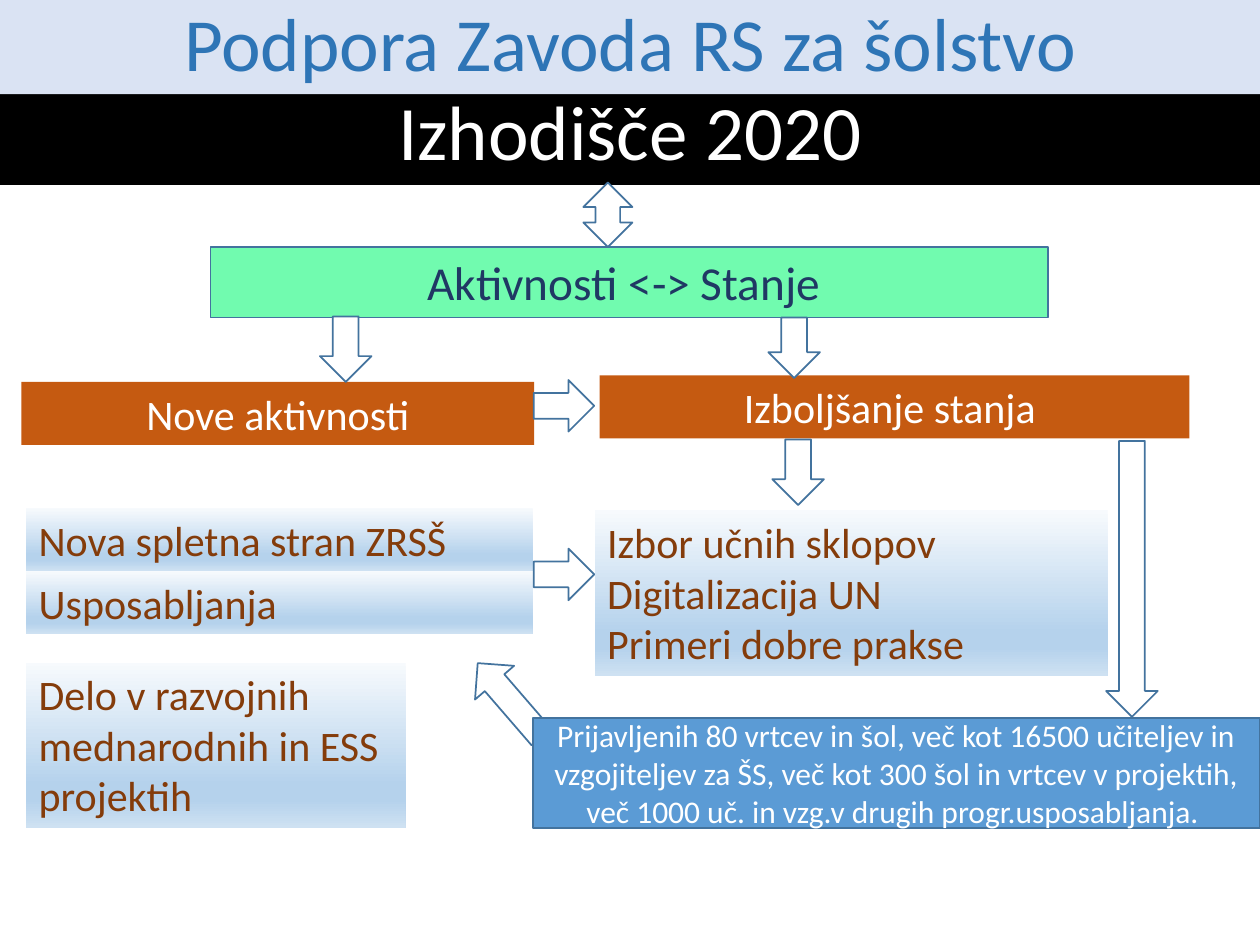
"""Build the slide on the 2020 starting points of school support."""
from copy import deepcopy
from dataclasses import dataclass

from pptx import Presentation
from pptx import util as u
from pptx.dml import color
from pptx.enum import shapes, text

FONT = "Calibri"
WHITE, OUTLINE, ORANGE, BROWN = "FFFFFF", "43739E", "C55A11", "843C0B"
GRADIENT = ((0, "F7FAFD"), (0.74, "B5D2EC"), (0.83, "B5D2EC"), (1, "CEE1F2"))
ARROW_WIDTH = 1.04


@dataclass
class Box:
    """A text box in centimetres; without a fill colour it gets the gradient."""
    lines: tuple[str, ...]
    left: float
    top: float
    width: float
    height: float
    fill: str | None = None
    ink: str = BROWN
    size: float = 24
    outline: float = 0
    centred: bool = True
    grows: bool = True
    spacing: float = 1


@dataclass
class Arrow:
    """A block arrow in centimetres, before rotation."""
    left: float
    top: float
    height: float
    rotation: float = 0
    width: float = ARROW_WIDTH
    kind: shapes.MSO_SHAPE = shapes.MSO_SHAPE.DOWN_ARROW


TITLE = Box(("Izhodišče 2020",), 0, 1.75, 25.4, 1.98, "000000", WHITE, 44,
            grows=False, spacing=0.9)

BOXES = (
    Box(("Nove aktivnosti",), 0.43, 7.7, 10.34, 1.27, ORANGE, WHITE),
    Box(("Aktivnosti <-> Stanje ",), 4.24, 4.98, 16.89, 1.42, "71FBAF", "203864", 27, 0.75),
    Box(("Izboljšanje stanja ",), 12.09, 7.57, 11.89, 1.27, ORANGE, WHITE),
    Box(("Izbor učnih sklopov", "Digitalizacija UN", "Primeri dobre prakse"),
        11.99, 10.29, 10.34, 3.33, centred=False),
    Box(("Nova spletna stran ZRSŠ",), 0.53, 10.24, 10.21, 1.27, centred=False),
    Box(("Usposabljanja",), 0.53, 11.51, 10.21, 1.27, centred=False),
    Box(("Delo v razvojnih mednarodnih in ESS projektih",),
        0.53, 13.36, 7.65, 3.33, centred=False),
)

ARROWS = (
    Arrow(11.76, 3.68, 1.3, width=0.99, kind=shapes.MSO_SHAPE.UP_DOWN_ARROW),
    Arrow(6.45, 6.38, 1.32),
    Arrow(15.49, 6.4, 1.22),
    Arrow(10.85, 7.57, 1.22, 270),
    Arrow(9.75, 13.13, 1.96, 139.2),
    Arrow(15.57, 8.86, 1.32),
    Arrow(10.85, 10.97, 1.22, 270),
    Arrow(22.3, 8.89, 5.56),
)

FRONT_BOXES = (
    Box(("Podpora Zavoda RS za šolstvo",), 0, 0, 25.4, 1.9, "DAE3F3", "2E75B6", 42.9,
        grows=False, spacing=0.9),
    Box(("Prijavljenih 80 vrtcev in šol, več kot 16500 učiteljev in vzgojiteljev za ŠS, "
         "več kot 300 šol in vrtcev v projektih, več 1000 uč. in vzg.v drugih "
         "progr.usposabljanja. ",),
        10.74, 14.48, 14.66, 2.21, "5B9BD5", WHITE, 18, 1, grows=False),
)


def rgb(value: str) -> color.RGBColor:
    """Turn a hex string into a colour."""
    return color.RGBColor.from_string(value)


def paint(shape, fill: str, outline: float) -> None:
    """Give a shape a solid fill and an outline of the given points."""
    shape.fill.solid()
    shape.fill.fore_color.rgb = rgb(fill)
    if outline:
        shape.line.color.rgb = rgb(OUTLINE)
        shape.line.width = u.Pt(outline)
    else:
        shape.line.fill.background()


def paint_gradient(shape) -> None:
    """Fill a shape from top to bottom with the shared gradient."""
    shape.line.fill.background()
    shape.fill.gradient()
    shape.fill.gradient_angle = 270
    first, last = shape._element.xpath(".//a:gs")
    for _ in GRADIENT[2:]:
        last.addprevious(deepcopy(first))
    for stop, (position, value) in zip(shape.fill.gradient_stops, GRADIENT):
        stop.position = position
        stop.color.rgb = rgb(value)


def fill_box(shape, box: Box) -> None:
    """Apply the fill, the wording and the text format of a box."""
    if box.fill:
        paint(shape, box.fill, box.outline)
    else:
        paint_gradient(shape)
    frame = shape.text_frame
    frame.text = "\n".join(box.lines)
    frame.word_wrap = True
    sizing, anchor = text.MSO_AUTO_SIZE, text.MSO_ANCHOR
    frame.auto_size = sizing.SHAPE_TO_FIT_TEXT if box.grows else sizing.NONE
    frame.vertical_anchor = anchor.TOP if box.grows else anchor.MIDDLE
    for paragraph in frame.paragraphs:
        paragraph.alignment = text.PP_ALIGN.CENTER if box.centred else text.PP_ALIGN.LEFT
        paragraph.line_spacing = box.spacing
        paragraph.font.name = FONT
        paragraph.font.size = u.Pt(box.size)
        paragraph.font.color.rgb = rgb(box.ink)


def add_box(slide, box: Box) -> None:
    """Draw one text box."""
    shape = slide.shapes.add_shape(
        shapes.MSO_SHAPE.RECTANGLE, u.Cm(box.left), u.Cm(box.top),
        u.Cm(box.width), u.Cm(box.height))
    shape.shadow.inherit = False
    fill_box(shape, box)


def add_arrow(slide, arrow: Arrow) -> None:
    """Draw one block arrow."""
    shape = slide.shapes.add_shape(
        arrow.kind, u.Cm(arrow.left), u.Cm(arrow.top),
        u.Cm(arrow.width), u.Cm(arrow.height))
    shape.shadow.inherit = False
    shape.rotation = arrow.rotation
    paint(shape, WHITE, 1)


def place_title(slide, box: Box) -> None:
    """Move and format the title placeholder."""
    title = slide.shapes.title
    title.left, title.top = u.Cm(box.left), u.Cm(box.top)
    title.width, title.height = u.Cm(box.width), u.Cm(box.height)
    fill_box(title, box)


def main() -> None:
    """Build and save the presentation."""
    presentation = Presentation()
    presentation.slide_width, presentation.slide_height = u.Cm(25.4), u.Cm(19.05)
    slide = presentation.slides.add_slide(presentation.slide_layouts.get_by_name("Title Only"))
    place_title(slide, TITLE)
    for box in BOXES:
        add_box(slide, box)
    for arrow in ARROWS:
        add_arrow(slide, arrow)
    for box in FRONT_BOXES:
        add_box(slide, box)
    presentation.save("out.pptx")


if __name__ == "__main__":
    main()
